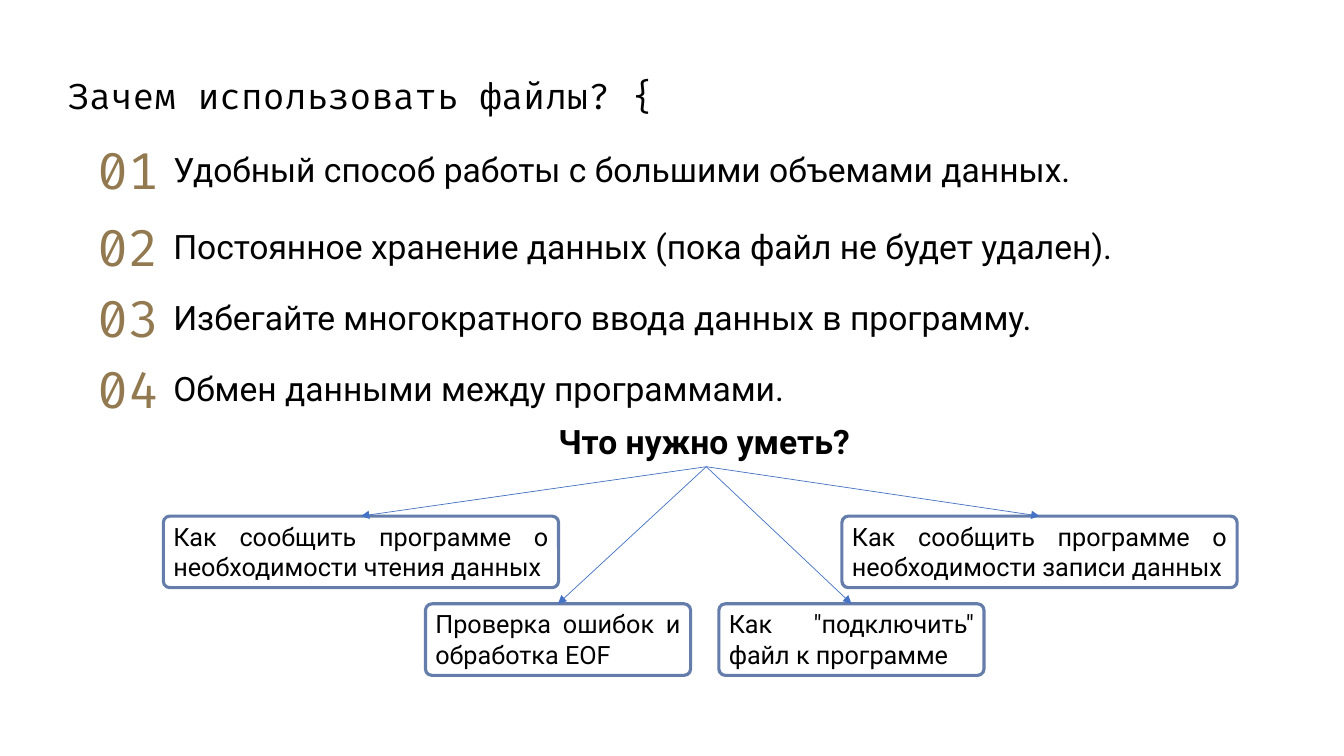
from dataclasses import dataclass

import lxml.etree
import pptx
import pptx.dml.color
import pptx.enum.shapes
import pptx.enum.text
import pptx.oxml.ns
import pptx.shapes.autoshape
import pptx.shapes.connector
import pptx.slide
import pptx.text.text
import pptx.util

Inches = pptx.util.Inches
Pt = pptx.util.Pt
RGB = pptx.dml.color.RGBColor


@dataclass(frozen=True)
class Theme:
    code_font: str = "Fira Code"
    body_font: str = "Roboto"
    text: RGB = RGB(0x00, 0x00, 0x00)
    number: RGB = RGB(0x92, 0x79, 0x50)
    border: RGB = RGB(0x64, 0x7D, 0xAB)
    arrow: RGB = RGB(0x44, 0x72, 0xC4)
    title_size: float = 25.2
    number_size: float = 36
    body_size: float = 24
    skill_size: float = 18
    border_width: float = 2.25
    arrow_width: float = 0.5


@dataclass(frozen=True)
class Reason:
    text: str
    top: float


@dataclass(frozen=True)
class Skill:
    text: str
    left: float
    top: float
    width: float


THEME = Theme()
SKILL_HEIGHT = 0.71
REASONS = [
    Reason("Удобный способ работы с большими объемами данных.", 1.33),
    Reason("Постоянное хранение данных (пока файл не будет удален).", 2.09),
    Reason("Избегайте многократного ввода данных в программу.", 2.8),
    Reason("Обмен данными между программами.", 3.5),
]
SKILLS = [
    Skill("Как сообщить программе о необходимости чтения данных", 1.62, 5.12, 3.92),
    Skill("Проверка ошибок и обработка EOF", 4.22, 5.99, 2.63),
    Skill('Как "подключить" файл к программе', 7.13, 5.99, 2.63),
    Skill("Как сообщить программе о необходимости записи данных", 8.35, 5.12, 3.92),
]


def style(p: pptx.text.text._Paragraph, font: str, size: float, color: RGB, bold: bool = False) -> None:
    p.font.name = font
    p.font.size = Pt(size)
    p.font.color.rgb = color
    p.font.bold = bold


def add_title(s: pptx.slide.Slide, text: str) -> None:
    sp = s.shapes.title
    sp.left, sp.top, sp.width, sp.height = map(Inches, (0.57, 0.73, 12.53, 0.49))
    tf = sp.text_frame
    tf.text = text
    tf.auto_size = pptx.enum.text.MSO_AUTO_SIZE.NONE
    tf.vertical_anchor = pptx.enum.text.MSO_ANCHOR.MIDDLE
    p = tf.paragraphs[0]
    p.alignment = pptx.enum.text.PP_ALIGN.LEFT
    p.line_spacing = 0.9
    style(p, THEME.code_font, THEME.title_size, THEME.text)


def add_text(s: pptx.slide.Slide, text: str, left: float, top: float, width: float, height: float,
             font: str, size: float, color: RGB, bold: bool = False) -> pptx.shapes.autoshape.Shape:
    sp = s.shapes.add_textbox(Inches(left), Inches(top), Inches(width), Inches(height))
    sp.text_frame.word_wrap = True
    sp.text_frame.text = text
    style(sp.text_frame.paragraphs[0], font, size, color, bold)
    return sp


def add_reason(s: pptx.slide.Slide, number: int, reason: Reason) -> None:
    add_text(s, f"{number:02}", 0.87, reason.top, 0.85, 0.71,
             THEME.code_font, THEME.number_size, THEME.number)
    add_text(s, reason.text, 1.62, reason.top + 0.1, 9.65, 0.5,
             THEME.body_font, THEME.body_size, THEME.text)


def add_skill(s: pptx.slide.Slide, skill: Skill) -> pptx.shapes.autoshape.Shape:
    sp = s.shapes.add_shape(
        pptx.enum.shapes.MSO_SHAPE.ROUNDED_RECTANGLE,
        Inches(skill.left), Inches(skill.top), Inches(skill.width), Inches(SKILL_HEIGHT))
    sp.adjustments[0] = 0.09
    sp.shadow.inherit = False
    sp.fill.background()
    sp.line.color.rgb = THEME.border
    sp.line.width = Pt(THEME.border_width)
    tf = sp.text_frame
    tf.word_wrap = True
    tf.vertical_anchor = pptx.enum.text.MSO_ANCHOR.TOP
    tf.margin_left = tf.margin_right = Inches(0.08)
    tf.margin_top = tf.margin_bottom = Inches(0.03)
    tf.text = skill.text
    p = tf.paragraphs[0]
    p.alignment = pptx.enum.text.PP_ALIGN.JUSTIFY
    style(p, THEME.body_font, THEME.skill_size, THEME.text)
    return sp


def add_arrow(s: pptx.slide.Slide, source: pptx.shapes.autoshape.Shape,
              target: pptx.shapes.autoshape.Shape) -> pptx.shapes.connector.Connector:
    c = s.shapes.add_connector(pptx.enum.shapes.MSO_CONNECTOR.STRAIGHT, 0, 0, 0, 0)
    c.begin_connect(source, 2)
    c.end_connect(target, 0)
    c.line.color.rgb = THEME.arrow
    c.line.width = Pt(THEME.arrow_width)
    qn = pptx.oxml.ns.qn
    ln = c.line._get_or_add_ln()
    lxml.etree.SubElement(ln, qn("a:tailEnd")).set("type", "triangle")
    lxml.etree.SubElement(c._element.spPr, qn("a:effectLst"))
    return c


def main() -> None:
    prs = pptx.Presentation()
    prs.slide_width = Inches(13.33)
    prs.slide_height = Inches(7.5)
    s = prs.slides.add_slide(prs.slide_layouts.get_by_name("Title Only"))

    add_title(s, "Зачем использовать файлы? {")
    for number, reason in enumerate(REASONS, start=1):
        add_reason(s, number, reason)

    question = add_text(s, "Что нужно уметь?", 5.44, 4.13, 3.13, 0.5,
                        THEME.body_font, THEME.body_size, THEME.text, bold=True)
    for skill in SKILLS:
        add_arrow(s, question, add_skill(s, skill))

    prs.save("out.pptx")


if __name__ == "__main__":
    main()
